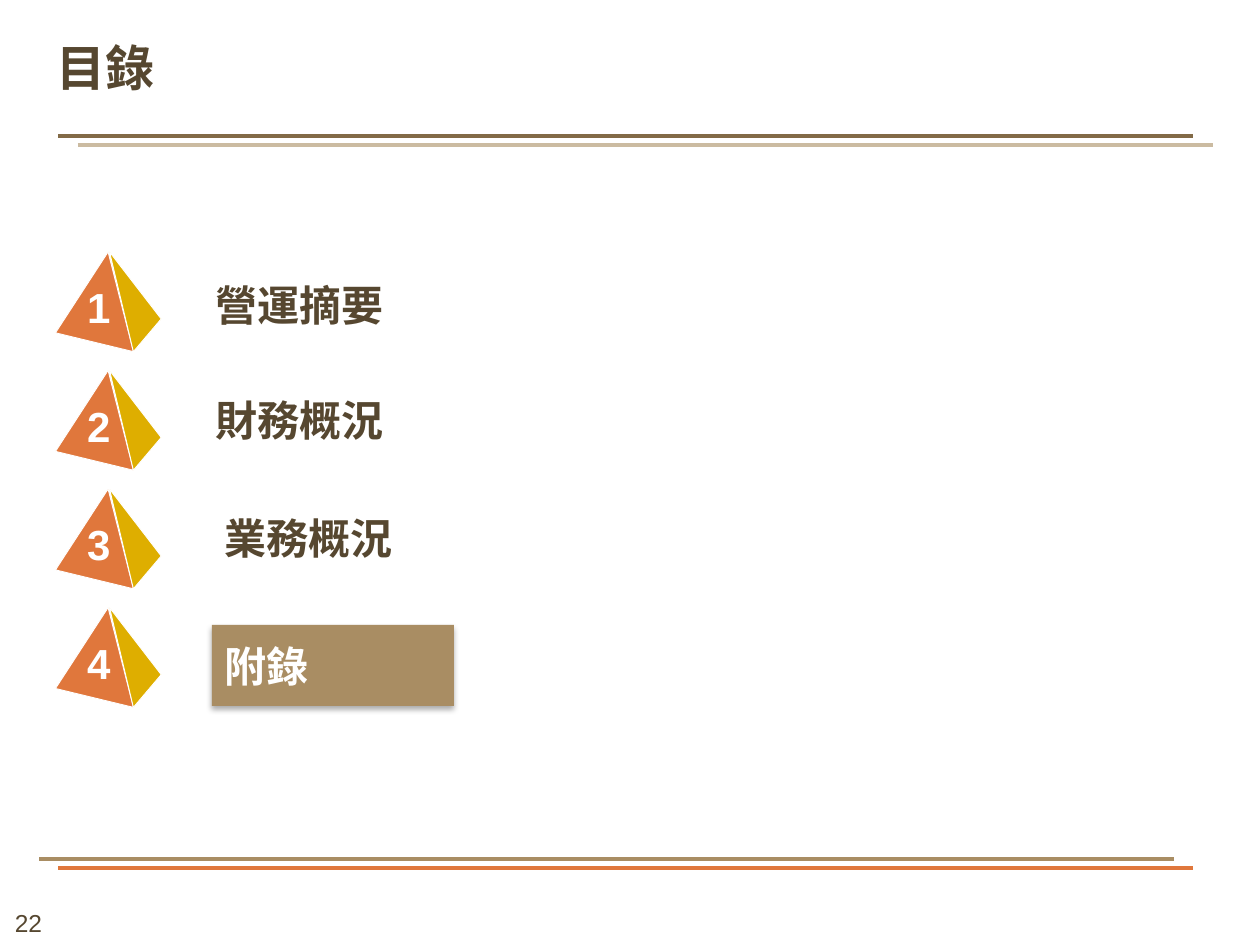
from dataclasses import dataclass

from lxml.etree import SubElement
from pptx import Presentation
from pptx.dml.color import RGBColor
from pptx.enum.shapes import MSO_CONNECTOR, MSO_SHAPE
from pptx.enum.text import MSO_ANCHOR as Anchor, MSO_AUTO_SIZE as AutoSize, PP_ALIGN as Align
from pptx.oxml.ns import qn
from pptx.util import Cm, Pt

COLORS = {
    "text": "564730", "white": "FFFFFF", "orange": "E0773C", "gold": "DEAE00",
    "tan": "A98D63", "beige": "CBBBA1", "brown": "826A47",
}
LATIN, CHINESE = "Arial", "Noto Sans CJK SC"
RULE_LENGTH = 22.88
FIRST_TOP, ROW_PITCH = 5.08, 2.39
FRONT_FACE = [(2.18, 0), (1.12, 1.63), (2.69, 2.01)]
SIDE_FACE = [(2.21, 0), (3.25, 1.35), (2.69, 2.01)]


@dataclass
class Rule:
    left: float
    top: float
    color: str


@dataclass
class Entry:
    text: str
    left: float
    top: float
    width: float
    height: float
    highlighted: bool = False


RULES = [
    Rule(1.17, 17.5, "orange"), Rule(0.79, 17.32, "tan"),
    Rule(1.57, 2.92, "beige"), Rule(1.17, 2.74, "brown"),
]
ENTRIES = [
    Entry("營運摘要", 4.09, 5.28, 8.41, 1.73),
    Entry("財務概況", 4.09, 7.65, 6.15, 1.63),
    Entry("業務概況", 4.27, 10.03, 6.15, 1.63),
    Entry("附錄", 4.27, 12.6, 4.88, 1.63, True),
]


def rgb(name: str) -> RGBColor:
    """Return a palette colour."""
    return RGBColor.from_string(COLORS[name])


def write(shape, text: str, size: float, font: str, color: str, bold: bool = True,
          align=Align.LEFT, anchor=Anchor.MIDDLE, inset: float | None = None):
    """Fill a shape with one formatted paragraph and return it."""
    frame = shape.text_frame
    frame.text = text
    frame.word_wrap = True
    frame.auto_size = AutoSize.NONE
    frame.vertical_anchor = anchor
    if inset is not None:
        frame.margin_left = frame.margin_right = Cm(inset)
        frame.margin_top = frame.margin_bottom = Cm(inset)
    paragraph = frame.paragraphs[0]
    paragraph.alignment = align
    run = paragraph.runs[0]
    run.font.size, run.font.bold, run.font.name = Pt(size), bold, font
    run.font.color.rgb = rgb(color)
    SubElement(run.font._element, qn("a:ea"), typeface=font)
    return paragraph


def add_rule(slide, rule: Rule) -> None:
    """Draw one horizontal rule."""
    line = slide.shapes.add_connector(
        MSO_CONNECTOR.STRAIGHT, Cm(rule.left), Cm(rule.top),
        Cm(rule.left + RULE_LENGTH), Cm(rule.top))
    line.line.color.rgb = rgb(rule.color)
    line.line.width = Pt(2.25)
    SubElement(line._element.spPr, qn("a:effectLst"))


def add_face(group, points: list[tuple[float, float]], top: float, color: str) -> None:
    """Draw one triangular face of a pyramid."""
    corners = [(Cm(x), Cm(top + y)) for x, y in points]
    builder = group.shapes.build_freeform(*corners[0])
    builder.add_line_segments(corners[1:], close=True)
    face = builder.convert_to_shape()
    face.shadow.inherit = False
    face.fill.solid()
    face.fill.fore_color.rgb = rgb(color)
    face.line.color.rgb = rgb("white")
    face.line.width = Pt(0.5)


def add_pyramid(slide, number: int) -> None:
    """Draw a numbered pyramid."""
    top = FIRST_TOP + (number - 1) * ROW_PITCH
    group = slide.shapes.add_group_shape()
    add_face(group, FRONT_FACE, top, "orange")
    add_face(group, SIDE_FACE, top, "gold")
    label = group.shapes.add_textbox(Cm(1.75), Cm(top + 0.76), Cm(0.48), Cm(0.86))
    paragraph = write(label, str(number), 24, LATIN, "white", align=Align.CENTER, inset=0)
    paragraph.line_spacing = 0.85


def add_shadow(shape) -> None:
    """Give a shape a soft shadow below it."""
    effects = SubElement(shape._element.spPr, qn("a:effectLst"))
    shadow = SubElement(effects, qn("a:outerShdw"), blurRad=str(Pt(3.5)),
                        dist=str(Pt(2.2)), dir="5400000", rotWithShape="0")
    color = SubElement(shadow, qn("a:srgbClr"), val="000000")
    SubElement(color, qn("a:alpha"), val="32000")


def add_entry(slide, entry: Entry) -> None:
    """Draw the heading of one section."""
    box = [Cm(value) for value in (entry.left, entry.top, entry.width, entry.height)]
    if entry.highlighted:
        shape = slide.shapes.add_shape(MSO_SHAPE.RECTANGLE, *box)
        shape.fill.solid()
        shape.fill.fore_color.rgb = rgb("tan")
        shape.line.fill.background()
        add_shadow(shape)
    else:
        shape = slide.shapes.add_textbox(*box)
    write(shape, entry.text, 24, CHINESE, "white" if entry.highlighted else "text")


def main() -> None:
    """Build and save the contents slide."""
    presentation = Presentation()
    presentation.slide_width, presentation.slide_height = Cm(25.4), Cm(19.05)
    slide = presentation.slides.add_slide(presentation.slide_layouts[5])

    title = slide.shapes.title
    title.left, title.top, title.width, title.height = Cm(1.14), Cm(0.64), Cm(23.9), Cm(1.3)
    paragraph = write(title, "目錄", 28, CHINESE, "text", anchor=Anchor.BOTTOM, inset=0)
    paragraph.line_spacing = Pt(40)

    page_number = slide.shapes.add_textbox(Cm(-0.43), Cm(18.19), Cm(2.01), Cm(0.86))
    write(page_number, "22", 14, LATIN, "text", bold=False,
          align=Align.CENTER, anchor=Anchor.TOP)

    for rule in RULES:
        add_rule(slide, rule)
    for number, entry in enumerate(ENTRIES, start=1):
        add_pyramid(slide, number)
        add_entry(slide, entry)
    presentation.save("out.pptx")


if __name__ == "__main__":
    main()
